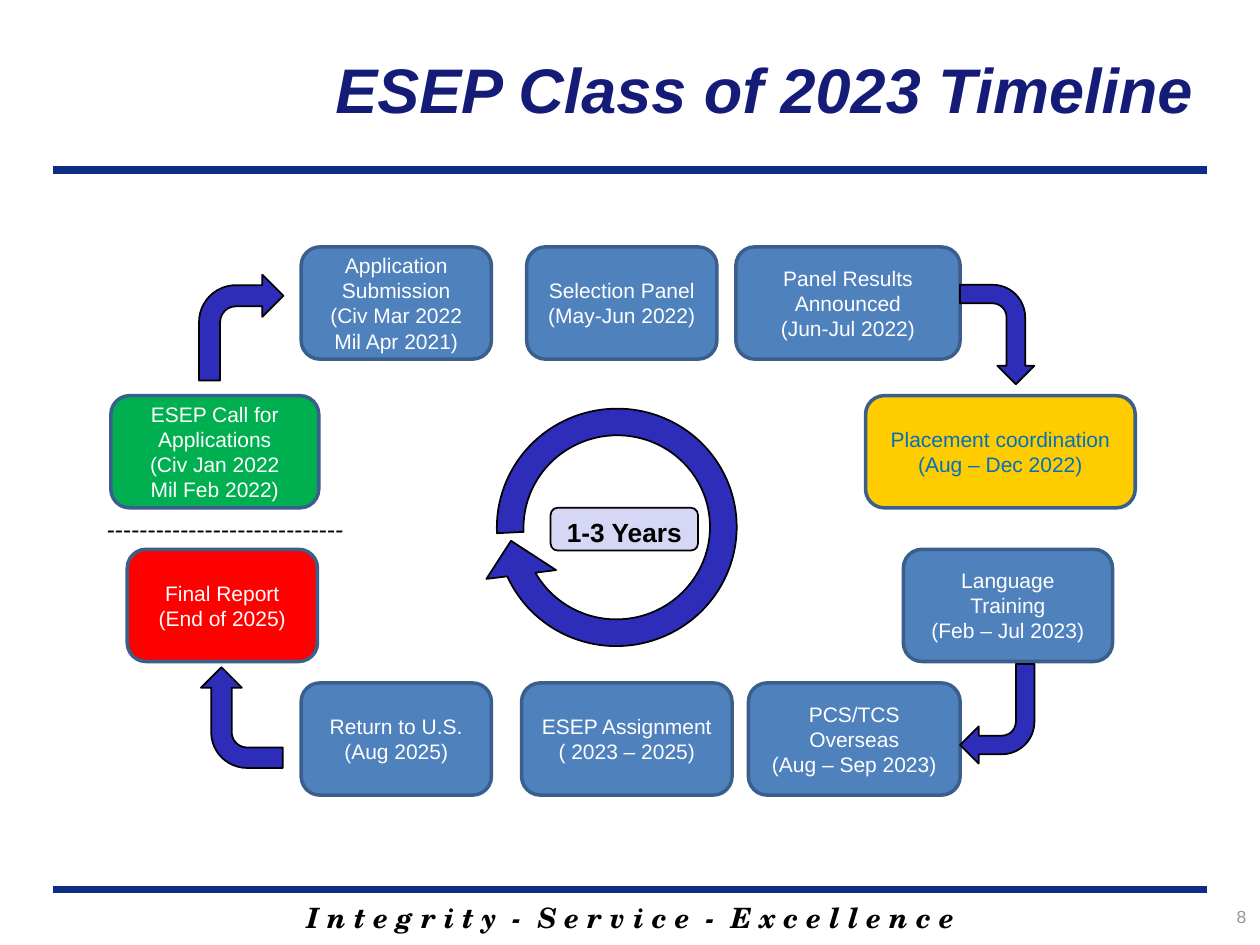
from dataclasses import dataclass

import pptx
import pptx.util
from pptx.dml.color import RGBColor
from pptx.enum.shapes import MSO_CONNECTOR, MSO_SHAPE
from pptx.enum.text import MSO_ANCHOR, PP_ALIGN
from pptx.oxml.xmlchemy import OxmlElement

Inches = pptx.util.Inches
Pt = pptx.util.Pt


@dataclass(frozen=True)
class Theme:
    font: str = "Arial"
    motto_font: str = "TeX Gyre Schola"
    title: str = "151C77"
    rule: str = "0C2D83"
    step: str = "4F81BD"
    step_border: str = "3A5F8C"
    start: str = "00B050"
    placement: str = "FFCC00"
    placement_text: str = "0070C0"
    finish: str = "FF0000"
    arrow: str = "2D2DB9"
    duration: str = "D6D6F5"
    page_number: str = "969696"
    black: str = "000000"
    white: str = "FFFFFF"
    title_size: int = 36
    motto_size: int = 16
    duration_size: int = 15
    divider_size: int = 14
    step_size: int = 12
    number_size: int = 10


THEME = Theme()
SLIDE_WIDTH, SLIDE_HEIGHT = 10, 7.5
MARGIN = 0.42
STEP_HEIGHT = 0.89
ROWS = {"top": 1.96, "upper": 3.14, "lower": 4.36, "bottom": 5.42}

# text, row, left, width, fill, text colour
STEPS = [
    ("ESEP Call for Applications\n(Civ Jan 2022\nMil Feb 2022)",
     "upper", 0.88, 1.65, THEME.start, THEME.white),
    ("Application Submission\n(Civ Mar 2022\nMil Apr 2021)",
     "top", 2.39, 1.51, THEME.step, THEME.white),
    ("Selection Panel\n(May-Jun 2022)",
     "top", 4.18, 1.51, THEME.step, THEME.white),
    ("Panel Results Announced\n(Jun-Jul 2022)",
     "top", 5.84, 1.78, THEME.step, THEME.white),
    ("Placement coordination\n(Aug – Dec 2022)",
     "upper", 6.87, 2.14, THEME.placement, THEME.placement_text),
    ("Language Training\n(Feb – Jul 2023)",
     "lower", 7.17, 1.66, THEME.step, THEME.white),
    ("PCS/TCS Overseas\n(Aug – Sep 2023)",
     "bottom", 5.94, 1.68, THEME.step, THEME.white),
    ("ESEP Assignment\n( 2023 – 2025)",
     "bottom", 4.14, 1.67, THEME.step, THEME.white),
    ("Return to U.S.\n(Aug 2025)",
     "bottom", 2.39, 1.51, THEME.step, THEME.white),
    ("Final Report\n(End of 2025)",
     "lower", 1.01, 1.51, THEME.finish, THEME.white),
]

# left, top, width, height before turning, then the turn in degrees
CORNER_ARROWS = [
    (1.58, 2.18, 0.67, 0.84, 0),
    (7.52, 2.36, 0.79, 0.59, 90),
    (7.62, 5.27, 0.59, 0.79, 180),
    (1.52, 5.37, 0.80, 0.65, 270),
]


def write(frame, text, size, color, align, font=THEME.font, bold=False, italic=False):
    frame.word_wrap = True
    frame.text = text
    for paragraph in frame.paragraphs:
        paragraph.alignment = align
        for run in paragraph.runs:
            run.font.name = font
            run.font.size = Pt(size)
            run.font.bold = bold
            run.font.italic = italic
            run.font.color.rgb = RGBColor.from_string(color)


def add_label(slide, box, text, size, color, align, **style):
    label = slide.shapes.add_textbox(*map(Inches, box))
    write(label.text_frame, text, size, color, align, **style)


def add_filled(slide, preset, box, fill, border, border_width):
    shape = slide.shapes.add_shape(preset, *map(Inches, box))
    shape.shadow.inherit = False
    shape.fill.solid()
    shape.fill.fore_color.rgb = RGBColor.from_string(fill)
    shape.line.color.rgb = RGBColor.from_string(border)
    shape.line.width = Pt(border_width)
    return shape


def add_rule(slide, y):
    rule = slide.shapes.add_connector(
        MSO_CONNECTOR.STRAIGHT,
        Inches(MARGIN), Inches(y), Inches(SLIDE_WIDTH - MARGIN), Inches(y))
    rule.line.color.rgb = RGBColor.from_string(THEME.rule)
    rule.line.width = Pt(4.5)
    rule._element.spPr.append(OxmlElement("a:effectLst"))


def add_title(slide, text):
    title = slide.shapes.title
    title.left, title.top, title.width, title.height = map(
        Inches, (1.82, 0.08, 7.75, 1.25))
    title.text_frame.vertical_anchor = MSO_ANCHOR.MIDDLE
    write(title.text_frame, text, THEME.title_size, THEME.title,
          PP_ALIGN.RIGHT, bold=True, italic=True)


def add_step(slide, text, row, left, width, fill, color):
    step = add_filled(slide, MSO_SHAPE.ROUNDED_RECTANGLE,
                      (left, ROWS[row], width, STEP_HEIGHT),
                      fill, THEME.step_border, 2)
    step.text_frame.vertical_anchor = MSO_ANCHOR.MIDDLE
    write(step.text_frame, text, THEME.step_size, color, PP_ALIGN.CENTER)


def add_arrow(slide, preset, box, turn):
    arrow = add_filled(slide, preset, box, THEME.arrow, THEME.black, 1)
    arrow.rotation = turn
    return arrow


def add_cycle(slide):
    """Draw the ring arrow with the length of the assignment inside it."""
    ring = add_arrow(slide, MSO_SHAPE.CIRCULAR_ARROW, (3.77, 3.07, 2.25, 2.23), 170.1)
    for index, value in enumerate((0.095, 11.423, 206.172, 4.261, 0.125)):
        ring.adjustments[index] = value
    duration = add_filled(slide, MSO_SHAPE.ROUNDED_RECTANGLE,
                          (4.37, 4.03, 1.17, 0.34), THEME.duration, THEME.black, 1)
    duration.text_frame.vertical_anchor = MSO_ANCHOR.TOP
    write(duration.text_frame, "1-3 Years", THEME.duration_size, THEME.black,
          PP_ALIGN.CENTER, bold=True)


def add_footer(slide):
    add_label(slide, (1.42, 7.1, 7.17, 0.37),
              "I n t e g r i t y  -  S e r v i c e  -  E x c e l l e n c e",
              THEME.motto_size, THEME.black, PP_ALIGN.CENTER,
              font=THEME.motto_font, bold=True, italic=True)
    add_label(slide, (8.74, 7.14, 1.25, 0.33), "8",
              THEME.number_size, THEME.page_number, PP_ALIGN.RIGHT)


def main():
    deck = pptx.Presentation()
    deck.slide_width, deck.slide_height = Inches(SLIDE_WIDTH), Inches(SLIDE_HEIGHT)
    slide = deck.slides.add_slide(deck.slide_layouts.get_by_name("Title Only"))

    add_title(slide, "ESEP Class of 2023 Timeline")
    for y in (1.35, 7.06):
        add_rule(slide, y)
    add_footer(slide)

    for step in STEPS:
        add_step(slide, *step)
    for *box, turn in CORNER_ARROWS:
        add_arrow(slide, MSO_SHAPE.BENT_ARROW, box, turn)
    add_label(slide, (0.75, 4.03, 2.46, 0.34), "-" * 29,
              THEME.divider_size, THEME.black, PP_ALIGN.LEFT)
    add_cycle(slide)

    deck.save("out.pptx")


if __name__ == "__main__":
    main()
